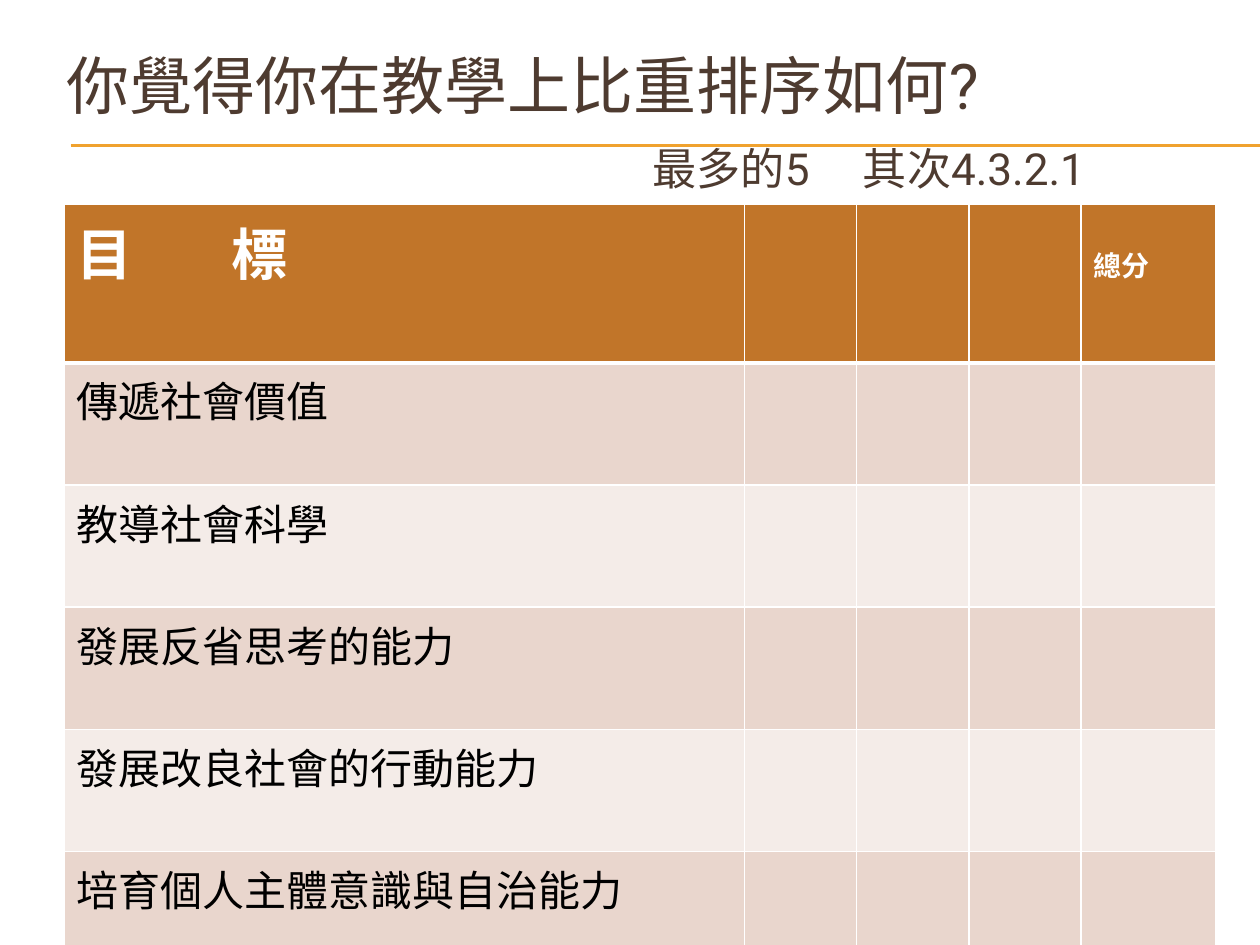
from dataclasses import dataclass

from lxml.etree import SubElement
from pptx import Presentation
from pptx.dml.color import RGBColor
from pptx.enum.shapes import MSO_CONNECTOR
from pptx.enum.text import MSO_ANCHOR, MSO_AUTO_SIZE, PP_ALIGN
from pptx.oxml.ns import qn
from pptx.util import Inches, Pt


@dataclass(frozen=True)
class Theme:
    """Colours, font and type sizes of the slide."""
    font: str = "Roboto"
    brown: str = "4E3B30"
    gold: str = "F0A22E"
    header: str = "C17529"
    bands: tuple = ("E9D6CD", "F4ECE8")
    white: str = "FFFFFF"
    black: str = "000000"
    title_size: float = 36
    hint_size: float = 25.2
    header_size: float = 32
    total_size: float = 16
    goal_size: float = 24


THEME = Theme()
GOALS = ["傳遞社會價值", "教導社會科學", "發展反省思考的能力",
         "發展改良社會的行動能力", "培育個人主體意識與自治能力"]
COLUMN_WIDTHS = [5.4, 0.89, 0.89, 0.89, 1.07]
HEADER_HEIGHT, GOAL_HEIGHT = 1.26, 0.97


def apply(target, formats):
    """Set each attribute of target from a dict."""
    for attribute, value in formats.items():
        setattr(target, attribute, value)


def write(frame, text, size, color, bold=False, tab=None):
    """Write one left-aligned paragraph, with an optional tab stop in inches."""
    paragraph = frame.paragraphs[0]
    paragraph.alignment = PP_ALIGN.LEFT
    if tab:
        stops = SubElement(paragraph._p.get_or_add_pPr(), qn("a:tabLst"))
        SubElement(stops, qn("a:tab"), pos=str(Inches(tab)), algn="l")
    run = paragraph.add_run()
    run.text = text
    apply(run.font, {"name": THEME.font, "size": Pt(size), "bold": bold})
    run.font.color.rgb = RGBColor.from_string(color)
    return paragraph


def add_title(slide):
    """Place and fill the title placeholder."""
    title = slide.shapes.title
    apply(title, {"left": Inches(0.43), "top": Inches(0.21),
                  "width": Inches(9.3), "height": Inches(0.92)})
    apply(title.text_frame, {"vertical_anchor": MSO_ANCHOR.MIDDLE,
                             "auto_size": MSO_AUTO_SIZE.NONE, "word_wrap": True})
    write(title.text_frame, "你覺得你在教學上比重排序如何?", THEME.title_size, THEME.brown)


def add_rule(slide, top):
    """Draw a gold rule from the title margin to the slide edge."""
    rule = slide.shapes.add_connector(MSO_CONNECTOR.STRAIGHT, Inches(0.56),
                                      Inches(top), Inches(10), Inches(top))
    rule.line.width = Pt(0.75)
    rule.line.color.rgb = RGBColor.from_string(THEME.gold)
    SubElement(rule._element.spPr, qn("a:effectLst"))


def add_hint(slide):
    """Add the scoring hint under the rule."""
    hint = slide.shapes.add_textbox(Inches(5.08), Inches(1.15), Inches(4.09), Inches(0.44))
    apply(hint.text_frame, {"word_wrap": True, "vertical_anchor": MSO_ANCHOR.MIDDLE})
    paragraph = write(hint.text_frame, "最多的5\t其次4.3.2.1", THEME.hint_size,
                      THEME.brown, tab=1.67)
    paragraph.line_spacing = 0.8


def style_cell(cell, fill, top=1, bottom=1):
    """Give a cell white borders and a solid fill."""
    properties = cell._tc.get_or_add_tcPr()
    for side, width in {"L": 1, "R": 1, "T": top, "B": bottom}.items():
        border = SubElement(properties, qn(f"a:ln{side}"), w=str(Pt(width)))
        solid = SubElement(border, qn("a:solidFill"))
        SubElement(solid, qn("a:srgbClr"), val=THEME.white)
    cell.fill.solid()
    cell.fill.fore_color.rgb = RGBColor.from_string(fill)


def add_score_table(slide):
    """Add the table of teaching goals with blank score columns."""
    heights = [HEADER_HEIGHT] + [GOAL_HEIGHT] * len(GOALS)
    table = slide.shapes.add_table(
        len(heights), len(COLUMN_WIDTHS), Inches(0.51), Inches(1.62),
        Inches(sum(COLUMN_WIDTHS)), Inches(sum(heights))).table
    for column, width in zip(table.columns, COLUMN_WIDTHS):
        column.width = Inches(width)
    for index, (row, height) in enumerate(zip(table.rows, heights)):
        row.height = Inches(height)
        fill = THEME.bands[(index - 1) % 2] if index else THEME.header
        for cell in row.cells:
            style_cell(cell, fill, top=3 if index == 1 else 1, bottom=1 if index else 3)

    write(table.cell(0, 0).text_frame, "目\t標", THEME.header_size, THEME.white,
          bold=True, tab=1.23)
    total = table.cell(0, len(COLUMN_WIDTHS) - 1)
    total.margin_top = Inches(0.32)
    write(total.text_frame, "總分", THEME.total_size, THEME.white, bold=True)
    for index, goal in enumerate(GOALS, start=1):
        write(table.cell(index, 0).text_frame, goal, THEME.goal_size, THEME.black)


def main():
    """Build and save the slide."""
    deck = Presentation()
    apply(deck, {"slide_width": Inches(10), "slide_height": Inches(7.5)})
    slide = deck.slides.add_slide(deck.slide_layouts[5])
    for top in (1.15, 1.16):
        add_rule(slide, top)
    add_title(slide)
    add_score_table(slide)
    add_hint(slide)
    deck.save("out.pptx")


if __name__ == "__main__":
    main()
